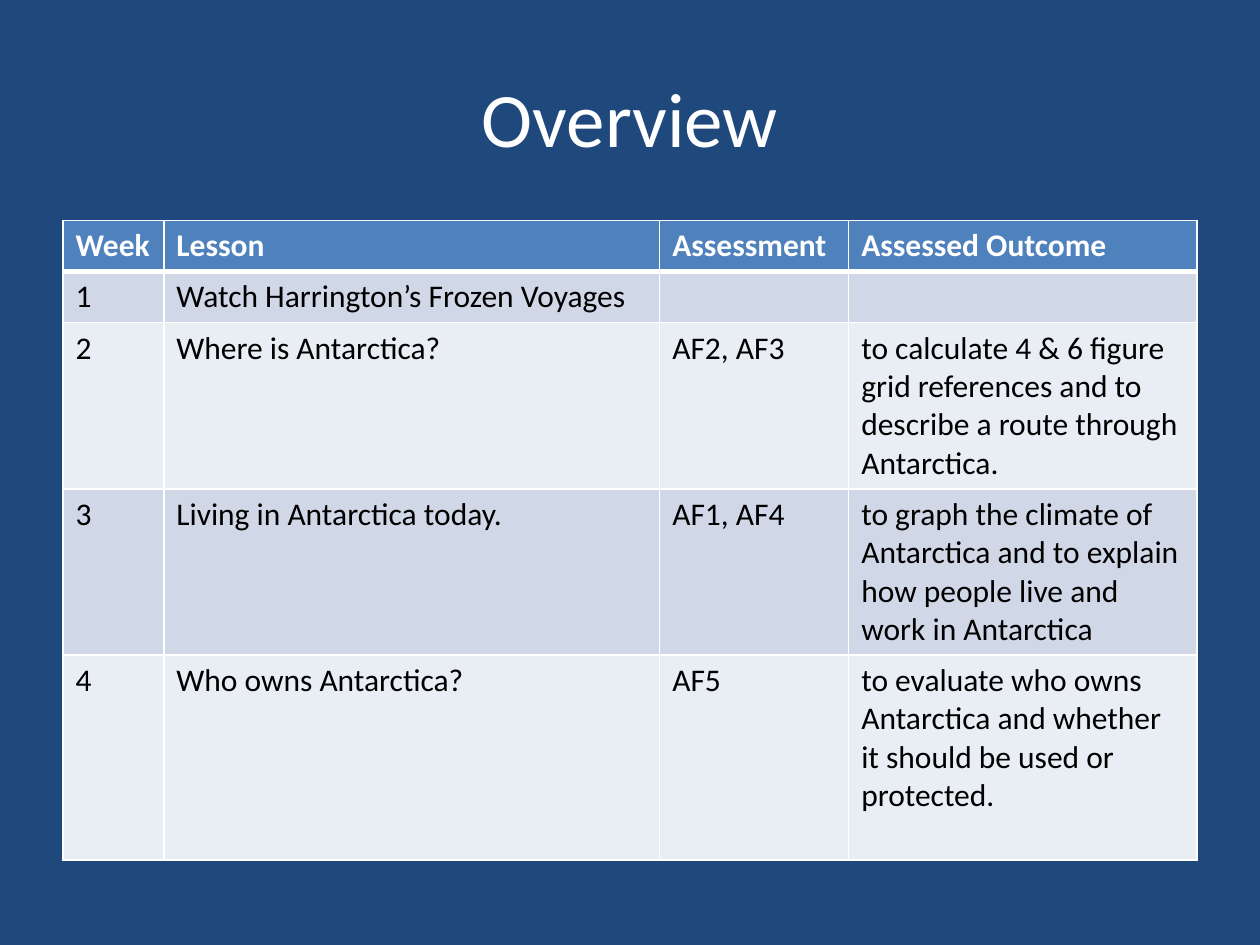
from lxml.etree import SubElement
from pptx import Presentation
from pptx.dml.color import RGBColor
from pptx.enum.text import MSO_ANCHOR, PP_ALIGN
from pptx.oxml.ns import qn
from pptx.util import Pt

FONT = "Calibri"
BACKGROUND, HEADER_FILL = "1F497D", "4F81BD"
BAND_FILLS = ("E9EDF4", "D0D8E8")
WHITE, BLACK = "FFFFFF", "000000"

COLUMN_WIDTHS = (57.6, 283.4, 108, 199)
ROW_HEIGHTS = (29.2, 29.2, 95, 95, 117)
LESSON_PLAN = (
    ("Week", "Lesson", "Assessment", "Assessed Outcome"),
    ("1", "Watch Harrington’s Frozen Voyages", "", ""),
    ("2", "Where is Antarctica?", "AF2, AF3",
     "to calculate 4 & 6 figure grid references and to describe a route "
     "through Antarctica."),
    ("3", "Living in Antarctica today.", "AF1, AF4",
     "to graph the climate of Antarctica and to explain how people live and "
     "work in Antarctica"),
    ("4", "Who owns Antarctica?", "AF5",
     "to evaluate who owns Antarctica and whether it should be used or "
     "protected."),
)


def set_fill(fill, color):
    fill.solid()
    fill.fore_color.rgb = RGBColor.from_string(color)


def add_run(paragraph, text, size, color, bold=False):
    run = paragraph.add_run()
    run.text = text
    run.font.name = FONT
    run.font.size = Pt(size)
    run.font.bold = bold
    run.font.color.rgb = RGBColor.from_string(color)


def add_title(slide, text):
    title = slide.shapes.add_textbox(Pt(36), Pt(21.6), Pt(648), Pt(90))
    frame = title.text_frame
    frame.word_wrap = True
    frame.vertical_anchor = MSO_ANCHOR.MIDDLE
    heading = frame.paragraphs[0]
    heading.alignment = PP_ALIGN.CENTER
    add_run(heading, text, 44, WHITE)


def set_borders(cell, top, bottom):
    properties = cell._tc.get_or_add_tcPr()
    for side, width in (("L", 1), ("R", 1), ("T", top), ("B", bottom)):
        border = SubElement(properties, qn(f"a:ln{side}"), w=str(Pt(width)))
        solid = SubElement(border, qn("a:solidFill"))
        SubElement(solid, qn("a:srgbClr"), val=WHITE)


def fill_cell(cell, text, row):
    is_header = row == 0
    # Borders come before the fill in the cell properties
    set_borders(cell, top=3 if row == 1 else 1, bottom=3 if is_header else 1)
    set_fill(cell.fill, HEADER_FILL if is_header else BAND_FILLS[row % 2])
    if text:
        add_run(cell.text_frame.paragraphs[0], text, 18,
                WHITE if is_header else BLACK, bold=is_header)


def add_lesson_table(slide):
    lessons = slide.shapes.add_table(
        len(ROW_HEIGHTS), len(COLUMN_WIDTHS), Pt(36), Pt(126),
        Pt(sum(COLUMN_WIDTHS)), Pt(sum(ROW_HEIGHTS))).table
    for column, width in zip(lessons.columns, COLUMN_WIDTHS):
        column.width = Pt(width)
    for row, height in zip(lessons.rows, ROW_HEIGHTS):
        row.height = Pt(height)
    for row, entries in enumerate(LESSON_PLAN):
        for column, text in enumerate(entries):
            fill_cell(lessons.cell(row, column), text, row)


def main():
    deck = Presentation()
    deck.slide_width, deck.slide_height = Pt(720), Pt(540)
    slide = deck.slides.add_slide(deck.slide_layouts[6])
    set_fill(slide.background.fill, BACKGROUND)

    # Heading and the weekly plan below it
    add_title(slide, "Overview")
    add_lesson_table(slide)
    deck.save("out.pptx")


if __name__ == "__main__":
    main()
